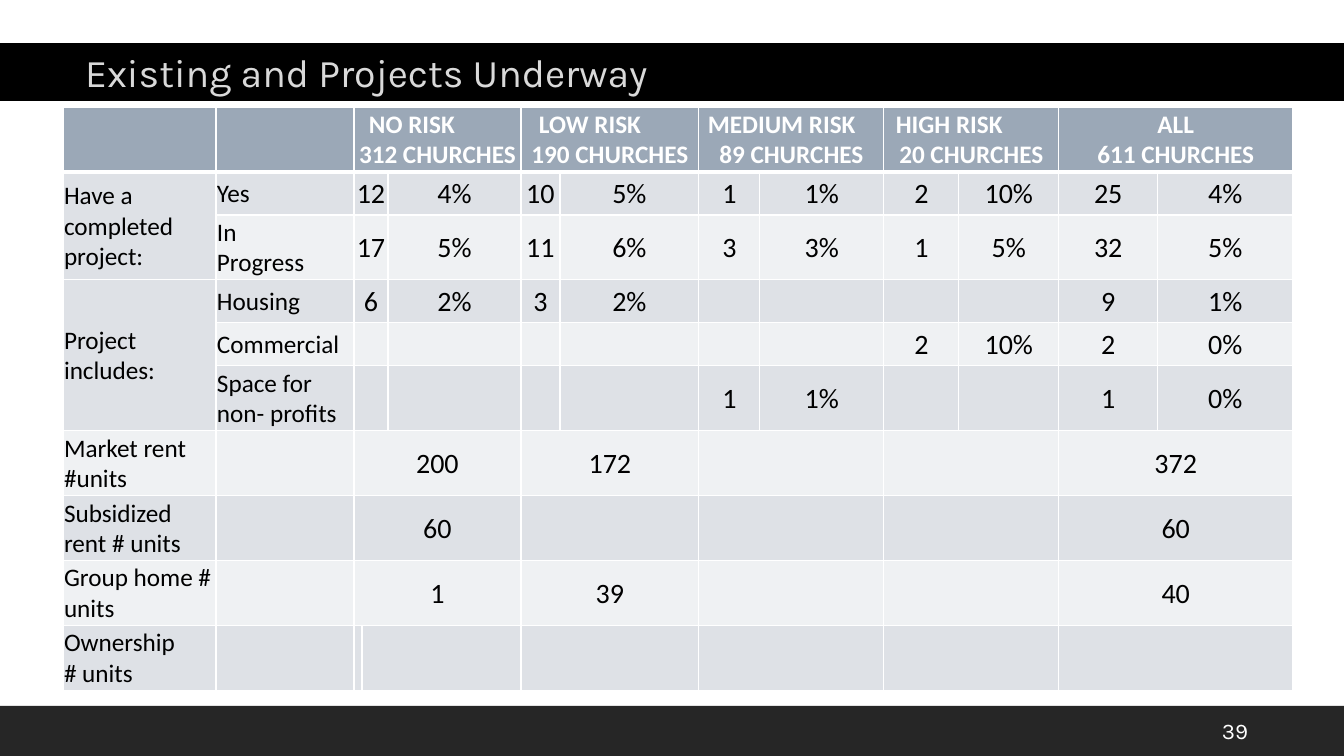
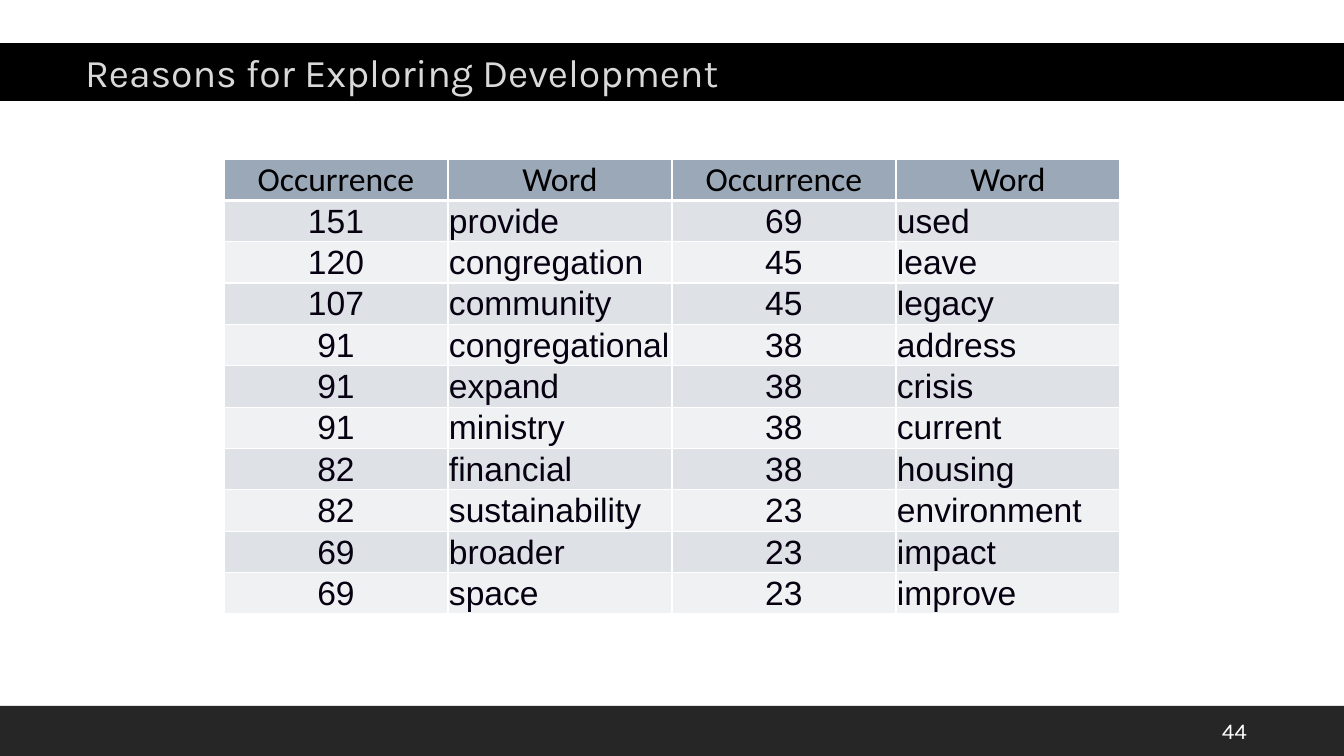
from pptx import Presentation
from pptx.dml.color import RGBColor
from pptx.enum.shapes import MSO_SHAPE
from pptx.enum.text import MSO_ANCHOR, MSO_AUTO_SIZE, PP_ALIGN
from pptx.oxml.ns import qn
from pptx.util import Pt
from lxml import etree

LEFT, CENTER = PP_ALIGN.LEFT, PP_ALIGN.CENTER
TOP, MIDDLE = MSO_ANCHOR.TOP, MSO_ANCHOR.MIDDLE

WHITE = RGBColor(0xFF, 0xFF, 0xFF)
BLACK = RGBColor(0x00, 0x00, 0x00)
FOOTER = RGBColor(0x26, 0x26, 0x26)
TITLE = RGBColor(0xD9, 0xD9, 0xD9)
HEADER = RGBColor(0x9B, 0xA8, 0xB7)
BANDS = (RGBColor(0xEF, 0xF1, 0xF3), RGBColor(0xDE, 0xE1, 0xE6))
INK = RGBColor(0x06, 0x00, 0x11)

SCALE = 914400 / 100.8
SLIDE_W, SLIDE_H = 1344, 756

TITLE_FONT = dict(name="Karla", size=Pt(28), color=TITLE, bold=False)
NUMBER_FONT = dict(name="Karla", size=Pt(16), color=WHITE, bold=False)
RISK_FONT = dict(name="Calibri", size=Pt(18), color=WHITE, bold=True)
LABEL_FONT = dict(RISK_FONT, color=BLACK, bold=False)
VALUE_FONT = dict(LABEL_FONT, size=Pt(20))
WORD_HEAD_FONT = dict(LABEL_FONT, size=Pt(24))
WORD_FONT = dict(WORD_HEAD_FONT, name="Arial", color=INK)

# Risk group, churches, left indent of the group name (None: centred)
RISKS = [
    ("NO RISK", "312 CHURCHES", 14),
    ("LOW RISK", "190 CHURCHES", 17),
    ("MEDIUM RISK", "89 CHURCHES", 8),
    ("HIGH RISK", "20 CHURCHES", 11),
    ("ALL", "611 CHURCHES", None),
]
# Two labels, then a count and a share for each risk group
SHARE_ROWS = [
    ("Have a completed project:", "Yes",
     "12", "4%", "10", "5%", "1", "1%", "2", "10%", "25", "4%"),
    ("", "In\nProgress",
     "17", "5%", "11", "6%", "3", "3%", "1", "5%", "32", "5%"),
    ("Project includes:", "Housing",
     "6", "2%", "3", "2%", "", "", "", "", "9", "1%"),
    ("", "Commercial", "", "", "", "", "", "", "2", "10%", "2", "0%"),
    ("", "Space for non- profits",
     "", "", "", "", "1", "1%", "", "", "1", "0%"),
]
# Two labels, then one number for each risk group
UNIT_ROWS = [
    ("Market rent #units", "", "200", "172", "", "", "372"),
    ("Subsidized rent # units", "", "60", "", "", "", "60"),
    ("Group home # units", "", "1", "39", "", "", "40"),
]
OWNERSHIP_ROW = ("Ownership\n# units", "", "", "", "", "", "", "")

PROJECT_COLS = [153, 138, 8, 26, 133, 39, 139, 61, 124, 75, 100, 99, 135]
PROJECT_ROWS = [65, 43, 65, 43, 43, 65, 65, 65, 65, 65]
# First column of each cell in a row
SHARE_STARTS = [0, 1, 2, 4, 5, 6, 7, 8, 9, 10, 11, 12]
UNIT_STARTS = [0, 1, 2, 5, 7, 9, 11]
OWNERSHIP_STARTS = [0, 1, 2, 3, 5, 7, 9, 11]
LABEL_SPANS = [(1, 2), (3, 5)]

WORD_HEADS = ["Occurrence", "Word"] * 2
WORD_ROWS = [
    ("151", "provide", "69", "used"),
    ("120", "congregation", "45", "leave"),
    ("107", "community", "45", "legacy"),
    ("91", "congregational", "38", "address"),
    ("91", "expand", "38", "crisis"),
    ("91", "ministry", "38", "current"),
    ("82", "financial", "38", "housing"),
    ("82", "sustainability", "23", "environment"),
    ("69", "broader", "23", "impact"),
    ("69", "space", "23", "improve"),
]


def px(n):
    return round(n * SCALE)


def set_text(tf, text, font, align=LEFT, anchor=MIDDLE):
    tf.text = text
    tf.vertical_anchor = anchor
    for p in tf.paragraphs:
        p.alignment = align
        for r in p.runs:
            for key, value in font.items():
                if key == "color":
                    r.font.color.rgb = value
                else:
                    setattr(r.font, key, value)


def add_frame(prs, title, number):
    """Add a slide with its title band, footer band and slide number."""
    s = prs.slides.add_slide(prs.slide_layouts[5])
    sp = s.shapes.title
    sp.left, sp.top, sp.width, sp.height = 0, px(43), px(SLIDE_W), px(58)
    sp.fill.solid()
    sp.fill.fore_color.rgb = BLACK
    tf = sp.text_frame
    tf.auto_size = MSO_AUTO_SIZE.NONE
    tf.margin_left, tf.margin_top, tf.margin_bottom = px(85), px(5), px(5)
    set_text(tf, title, TITLE_FONT, anchor=TOP)

    sp = s.shapes.add_shape(MSO_SHAPE.RECTANGLE, 0, px(706), px(SLIDE_W), px(50))
    sp.shadow.inherit = False
    sp.fill.solid()
    sp.fill.fore_color.rgb = FOOTER
    sp.line.fill.background()

    sp = s.shapes.add_textbox(px(1212), px(711), px(86), px(40))
    sp.text_frame.word_wrap = True
    set_text(sp.text_frame, number, NUMBER_FONT)
    return s


def set_borders(cell, bottom):
    tc_pr = cell._tc.get_or_add_tcPr()
    for side, width in (("L", 1), ("R", 1), ("T", 1), ("B", bottom)):
        ln = etree.SubElement(tc_pr, qn(f"a:ln{side}"), w=str(Pt(width)))
        fill = etree.SubElement(ln, qn("a:solidFill"))
        etree.SubElement(fill, qn("a:srgbClr"), val=str(WHITE))


def add_banded_table(s, left, top, cols, rows):
    width, height = sum(cols), sum(rows)
    table = s.shapes.add_table(len(rows), len(cols), px(left), px(top),
                               px(width), px(height)).table
    for col, w in zip(table.columns, cols):
        col.width = px(w)
    for i, (row, h) in enumerate(zip(table.rows, rows)):
        row.height = px(h)
        for cell in row.cells:
            set_borders(cell, 1 if i else 3)
            cell.margin_left = cell.margin_right = cell.margin_top = px(1)
            cell.margin_bottom = 0
            cell.fill.solid()
            cell.fill.fore_color.rgb = BANDS[i % 2] if i else HEADER
    return table


def fill_row(table, i, starts, texts):
    """Merge the columns of each cell in a row, then write its text."""
    ends = starts[1:] + [len(table.columns)]
    for start, end, text in zip(starts, ends, texts):
        cell = table.cell(i, start)
        if end - start > 1:
            cell.merge(table.cell(i, end - 1))
        if text:
            is_label = start < 2
            set_text(cell.text_frame, text,
                     LABEL_FONT if is_label else VALUE_FONT,
                     LEFT if is_label else CENTER)
            cell.vertical_anchor = MIDDLE


def build_projects(prs):
    s = add_frame(prs, "Existing and Projects Underway", "39")
    table = add_banded_table(s, 63, 107, PROJECT_COLS, PROJECT_ROWS)
    fill_row(table, 0, UNIT_STARTS, [""] * len(UNIT_STARTS))
    for start, (risk, churches, indent) in zip(UNIT_STARTS[2:], RISKS):
        cell = table.cell(0, start)
        set_text(cell.text_frame, f"{risk}\n{churches}", RISK_FONT, CENTER)
        cell.vertical_anchor = MIDDLE
        if indent is not None:
            p = cell.text_frame.paragraphs[0]
            p.alignment = LEFT
            p._p.get_or_add_pPr().set("marL", str(px(indent)))

    body = ([(SHARE_STARTS, texts) for texts in SHARE_ROWS]
            + [(UNIT_STARTS, texts) for texts in UNIT_ROWS]
            + [(OWNERSHIP_STARTS, OWNERSHIP_ROW)])
    for i, (starts, texts) in enumerate(body, 1):
        fill_row(table, i, starts, texts)
    for first, last in LABEL_SPANS:
        table.cell(first, 0).merge(table.cell(last, 0))


def build_words(prs):
    s = add_frame(prs, "Reasons for Exploring Development", "44")
    rows = [WORD_HEADS] + WORD_ROWS
    n_rows, n_cols = len(rows), len(WORD_HEADS)
    table = add_banded_table(s, 224, 159, [896 / n_cols] * n_cols,
                             [455 / n_rows] * n_rows)
    for i, texts in enumerate(rows):
        for j, text in enumerate(texts):
            cell = table.cell(i, j)
            set_text(cell.text_frame, text,
                     WORD_FONT if i else WORD_HEAD_FONT,
                     LEFT if i and j % 2 else CENTER)
            cell.vertical_anchor = MIDDLE


def main():
    prs = Presentation()
    prs.slide_width, prs.slide_height = px(SLIDE_W), px(SLIDE_H)
    build_projects(prs)
    build_words(prs)
    prs.save("out.pptx")


if __name__ == "__main__":
    main()
